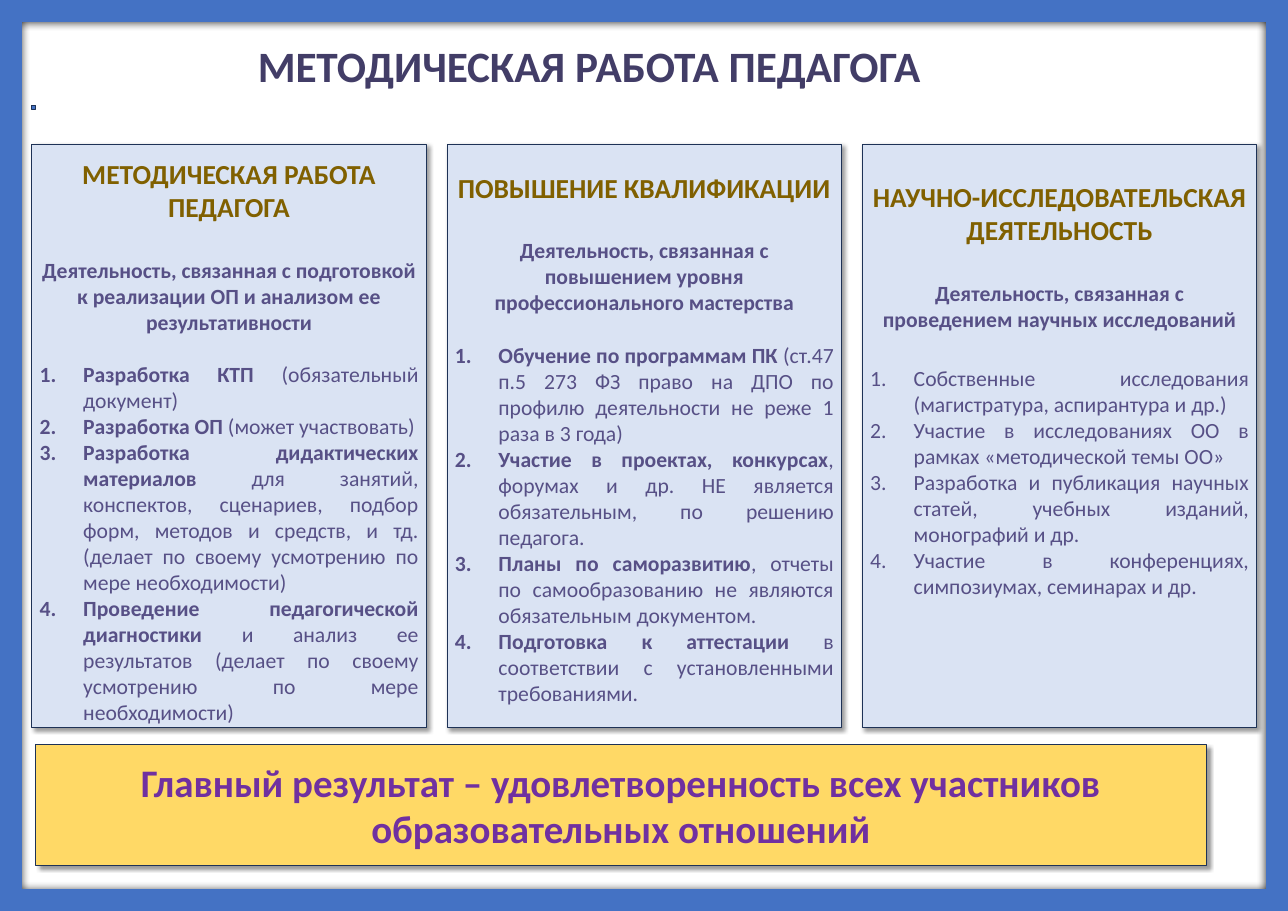
from dataclasses import dataclass

from lxml.etree import SubElement
from pptx import Presentation
from pptx.dml.color import RGBColor
from pptx.enum.shapes import MSO_SHAPE
from pptx.enum.text import MSO_ANCHOR, PP_ALIGN
from pptx.oxml.ns import qn
from pptx.util import Inches, Pt

SLIDE_WIDTH, SLIDE_HEIGHT = Inches(16.53), Inches(11.69)
FONT = "Calibri"
BLUE, NAVY, PALE_BLUE, YELLOW = "4472C4", "1E3256", "DAE3F3", "FFD966"
TITLE_COLOR, HEADING_COLOR, BODY_COLOR, RESULT_COLOR = "423D67", "806000", "575086", "7030A0"
HEADING_SIZE, BODY_SIZE = 25.4, 20
HEADING_GAP = 31
LIST_INDENT = Inches(0.56)
CARD_STEP = 32.24


@dataclass
class Box:
    """A place in percent of the slide's width and height."""
    left: float
    top: float
    width: float
    height: float

    def lengths(self) -> list[int]:
        return [round(share * side / 100) for share, side in (
            (self.left, SLIDE_WIDTH), (self.top, SLIDE_HEIGHT),
            (self.width, SLIDE_WIDTH), (self.height, SLIDE_HEIGHT))]


@dataclass
class Shadow:
    opacity: int
    blur: float
    distance: float
    angle: int


@dataclass
class Item:
    lead: str
    rest: str


@dataclass
class Card:
    heading: str
    summary: str
    items: list[Item]
    top_inset: float
    list_gap: float


SOFT_SHADOW = Shadow(40, 4, 3, 45)
FRAME_SHADOW = Shadow(100, 8.5, 1, 90)

CARDS = [
    Card("МЕТОДИЧЕСКАЯ РАБОТА ПЕДАГОГА",
         "Деятельность, связанная с подготовкой к реализации ОП и анализом ее результативности",
         [Item("Разработка КТП ", "(обязательный документ)"),
          Item("Разработка ОП ", "(может участвовать)"),
          Item("Разработка дидактических материалов ",
               "для занятий, конспектов, сценариев, подбор форм, методов и средств, и тд. "
               "(делает по своему усмотрению по мере необходимости)"),
          Item("Проведение педагогической диагностики ",
               "и анализ ее результатов (делает по своему усмотрению по мере необходимости)")],
         0.17, 24.4),
    Card("ПОВЫШЕНИЕ КВАЛИФИКАЦИИ",
         "Деятельность, связанная с повышением уровня профессионального мастерства",
         [Item("Обучение по программам ПК ",
               "(ст.47 п.5 273 ФЗ право на ДПО по профилю деятельности не реже 1 раза в 3 года)"),
          Item("Участие в проектах, конкурсах",
               ", форумах и др. НЕ является обязательным, по решению педагога."),
          Item("Планы по саморазвитию",
               ", отчеты по самообразованию не являются обязательным документом."),
          Item("Подготовка к аттестации ", "в соответствии с установленными требованиями.")],
         0.34, 24.4),
    Card("НАУЧНО-ИССЛЕДОВАТЕЛЬСКАЯ ДЕЯТЕЛЬНОСТЬ",
         "Деятельность, связанная с проведением научных исследований",
         [Item("", "Собственные исследования (магистратура, аспирантура и др.)"),
          Item("", "Участие в исследованиях ОО в рамках «методической темы ОО»"),
          Item("", "Разработка и публикация научных статей, учебных изданий, монографий и др."),
          Item("", "Участие в конференциях, симпозиумах, семинарах и др.")],
         0.46, HEADING_GAP),
]


def color(value: str) -> RGBColor:
    return RGBColor.from_string(value)


def add_shadow(shape, shadow: Shadow) -> None:
    effects = shape._element.spPr.find(qn("a:effectLst"))
    outer = SubElement(effects, qn("a:outerShdw"), blurRad=str(Pt(shadow.blur)),
                       dist=str(Pt(shadow.distance)), dir=str(shadow.angle * 60000),
                       algn="tl", rotWithShape="0")
    black = SubElement(outer, qn("a:srgbClr"), val="000000")
    SubElement(black, qn("a:alpha"), val=str(shadow.opacity * 1000))


def add_panel(slide, box: Box, fill: str, line: str | None = NAVY,
              shadow: Shadow | None = SOFT_SHADOW, kind=MSO_SHAPE.RECTANGLE):
    shape = slide.shapes.add_shape(kind, *box.lengths())
    shape.fill.solid()
    shape.fill.fore_color.rgb = color(fill)
    if line:
        shape.line.color.rgb = color(line)
        shape.line.width = Pt(1)
    else:
        shape.line.fill.background()
    shape.shadow.inherit = False
    if shadow:
        add_shadow(shape, shadow)
    return shape


def style(target, size: float, text_color: str, bold: bool = True) -> None:
    """Format the font of a paragraph or a run."""
    target.font.name = FONT
    target.font.size = Pt(size)
    target.font.bold = bold
    target.font.color.rgb = color(text_color)


def write(paragraph, text: str, size: float, text_color: str,
          alignment=PP_ALIGN.CENTER, space_before: float = 0) -> None:
    paragraph.text = text
    paragraph.alignment = alignment
    if space_before:
        paragraph.space_before = Pt(space_before)
    for run in paragraph.runs:
        style(run, size, text_color)


def add_item(text_frame, item: Item, space_before: float) -> None:
    paragraph = text_frame.add_paragraph()
    paragraph.alignment = PP_ALIGN.JUSTIFY
    paragraph.space_before = Pt(space_before)
    properties = paragraph._p.get_or_add_pPr()
    properties.set("marL", str(LIST_INDENT))
    properties.set("indent", str(-LIST_INDENT))
    SubElement(properties, qn("a:buFont"), typeface=FONT)
    SubElement(properties, qn("a:buAutoNum"), type="arabicPeriod")
    for text, bold in ((item.lead, True), (item.rest, False)):
        if text:
            run = paragraph.add_run()
            run.text = text
            style(run, BODY_SIZE, BODY_COLOR, bold)


def add_card(slide, card: Card, column: int) -> None:
    panel = add_panel(slide, Box(2.48 + column * CARD_STEP, 15.83, 30.61, 64.07), PALE_BLUE)
    text_frame = panel.text_frame
    text_frame.word_wrap = True
    text_frame.vertical_anchor = MSO_ANCHOR.TOP
    text_frame.margin_top = Inches(card.top_inset)
    write(text_frame.paragraphs[0], card.heading, HEADING_SIZE, HEADING_COLOR)
    write(text_frame.add_paragraph(), card.summary, BODY_SIZE, BODY_COLOR,
          space_before=HEADING_GAP)
    for number, item in enumerate(card.items):
        add_item(text_frame, item, 0 if number else card.list_gap)


def add_title(slide) -> None:
    title = slide.shapes.add_textbox(*Box(19.42, 3.93, 53.05, 6.59).lengths())
    title.text_frame.word_wrap = True
    write(title.text_frame.paragraphs[0], "МЕТОДИЧЕСКАЯ РАБОТА ПЕДАГОГА", 40, TITLE_COLOR,
          PP_ALIGN.LEFT)


def add_result(slide) -> None:
    panel = add_panel(slide, Box(2.78, 81.69, 90.86, 13.34), YELLOW)
    panel.text_frame.word_wrap = True
    panel.text_frame.vertical_anchor = MSO_ANCHOR.MIDDLE
    write(panel.text_frame.paragraphs[0],
          "Главный результат – удовлетворенность всех участников образовательных отношений",
          36, RESULT_COLOR)


def main() -> None:
    presentation = Presentation()
    presentation.slide_width, presentation.slide_height = SLIDE_WIDTH, SLIDE_HEIGHT
    slide = presentation.slides.add_slide(presentation.slide_layouts[6])
    frame = add_panel(slide, Box(0, 0, 100, 100), BLUE, None, FRAME_SHADOW, MSO_SHAPE.FRAME)
    frame.adjustments[0] = 0.024
    add_title(slide)
    for column, card in enumerate(CARDS):
        add_card(slide, card, column)
    add_panel(slide, Box(2.48, 11.55, 0.3, 0.43), BLUE, shadow=None)
    add_result(slide)
    presentation.save("out.pptx")


if __name__ == "__main__":
    main()
